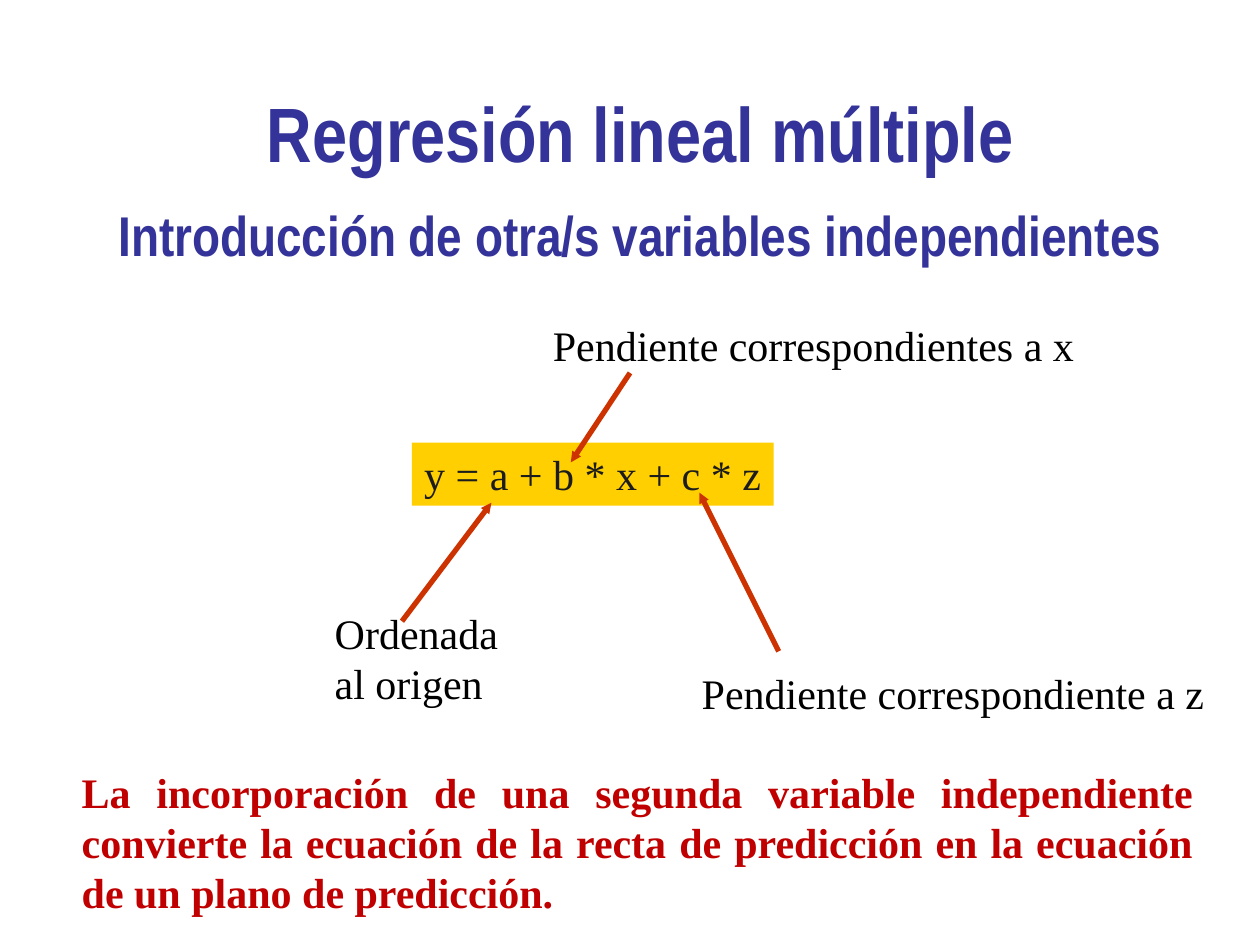
from lxml.etree import SubElement as Sub
from pptx import Presentation
from pptx.dml.color import RGBColor
from pptx.enum.shapes import MSO_CONNECTOR as Line, MSO_SHAPE as Shape
from pptx.enum.text import MSO_ANCHOR as Anchor, MSO_AUTO_SIZE as Auto, PP_ALIGN as Align
from pptx.oxml.ns import qn
from pptx.util import Pt

BLUE = RGBColor(0x33, 0x33, 0x99)
GOLD = RGBColor(0xFF, 0xCF, 0x01)
DARK = RGBColor(0x1C, 0x1C, 0x1C)
BLACK = RGBColor(0, 0, 0)
RUST = RGBColor(0xCC, 0x33, 0x00)
RED = RGBColor(0xC0, 0, 0)
SERIF, NARROW = "Times New Roman", "Arial Narrow"
HEAD = dict(font=NARROW, color=BLUE, bold=True, align=Align.CENTER)


def write(shape, text, size=24, font=SERIF, color=BLACK, bold=False,
          align=Align.LEFT, anchor=Anchor.TOP, wrap=True):
    """Put formatted text into a shape."""
    frame = shape.text_frame
    frame.text = text
    frame.word_wrap = wrap
    frame.auto_size = Auto.NONE
    frame.vertical_anchor = anchor
    para = frame.paragraphs[0]
    para.alignment = align
    face = para.runs[0].font
    face.size, face.name, face.bold = Pt(size), font, bold
    face.color.rgb = color


def label(slide, box, text, **style):
    write(slide.shapes.add_textbox(*map(Pt, box)), text, **style)


def title(slide, box, text, **style):
    shape = slide.shapes.title
    shape.left, shape.top, shape.width, shape.height = map(Pt, box)
    write(shape, text, **style)


def panel(slide, box, text, fill, **style):
    shape = slide.shapes.add_shape(Shape.RECTANGLE, *map(Pt, box))
    shape.shadow.inherit = False
    shape.fill.solid()
    shape.fill.fore_color.rgb = fill
    shape.line.fill.background()
    write(shape, text, **style)


def arrow(slide, ends):
    link = slide.shapes.add_connector(Line.STRAIGHT, *map(Pt, ends))
    link.line.color.rgb = RUST
    link.line.width = Pt(3)
    props = link.element.spPr
    Sub(props.find(qn("a:ln")), qn("a:tailEnd"), type="triangle", w="sm", len="sm")
    Sub(props, qn("a:effectLst"))


def main():
    deck = Presentation()
    deck.slide_width, deck.slide_height = Pt(720), Pt(540)
    slide = deck.slides.add_slide(deck.slide_layouts[5])

    # Heading
    title(slide, (48, 15, 636.5, 90), "Regresión lineal múltiple",
          size=44, anchor=Anchor.BOTTOM, **HEAD)

    # Equation
    panel(slide, (235.3, 253, 206.8, 36), "y = a + b * x + c * z", GOLD,
          color=DARK, wrap=False)

    # Names of the terms
    label(slide, (184.2, 343.5, 116, 65), "Ordenada al origen")
    label(slide, (308.9, 179.3, 312.5, 36), "Pendiente correspondientes a x", wrap=False)
    label(slide, (393.9, 378, 301.7, 36), "Pendiente correspondiente a z", wrap=False)

    # Arrows from each name to its term
    for ends in ((229.7, 355, 280.8, 287.3),
                 (360, 213.1, 326.2, 264.2),
                 (445, 372.2, 399.6, 281.5)):
        arrow(slide, ends)

    # Subtitle and conclusion
    label(slide, (48, 88.6, 636.5, 90), "Introducción de otra/s variables independientes",
          size=32, anchor=Anchor.MIDDLE, **HEAD)
    label(slide, (39.6, 434.2, 649.4, 94.3),
          "La incorporación de una segunda variable independiente convierte la "
          "ecuación de la recta de predicción en la ecuación de un plano de predicción.",
          color=RED, bold=True, align=Align.JUSTIFY)

    deck.save("out.pptx")


if __name__ == "__main__":
    main()
